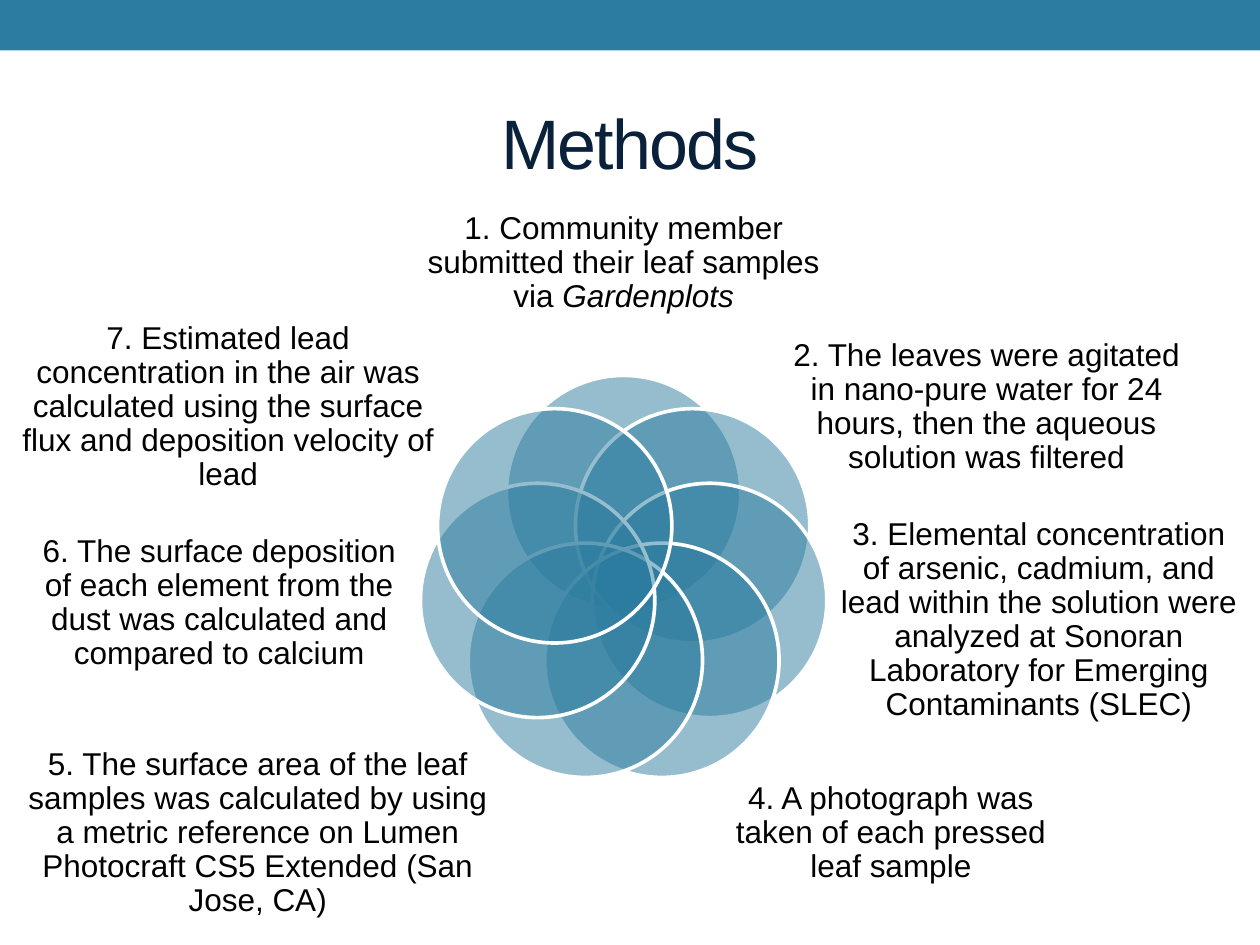
from math import cos, pi, sin

from lxml.etree import SubElement
from pptx import Presentation
from pptx.dml.color import RGBColor
from pptx.enum.shapes import MSO_SHAPE
from pptx.enum.text import MSO_ANCHOR, PP_ALIGN
from pptx.oxml.ns import qn
from pptx.util import Inches, Pt

COLUMNS, ROWS = 100, 75
TEAL, NAVY, WHITE, BLACK = "2C7C9F", "09213B", "FFFFFF", "000000"

# Centre of the ring, its radius and the radius of each petal, in grid cells
RING_COLUMN, RING_ROW, RING_RADIUS, PETAL_RADIUS = 49.5, 46.1, 7, 9.3

# Grid box (column, row, columns, rows) and spans; text between * is italic
STEPS = [
    ((33.7, 15.2, 31.6, 11.4),
     "1. Community member submitted their leaf samples via *Gardenplots*"),
    ((62.8, 26.1, 31, 12.5),
     "2. The leaves were agitated in nano-pure water for 24 hours, "
     "then the aqueous solution was filtered"),
    ((66.6, 42.5, 31.7, 13.4),
     "3. Elemental concentration of arsenic, cadmium, and lead within the "
     "solution were analyzed at Sonoran Laboratory for Emerging "
     "Contaminants (SLEC)"),
    ((58.4, 60, 24.6, 12.3),
     "4. A photograph was taken of each pressed leaf sample"),
    ((1.7, 60, 37.5, 12.3),
     "5. The surface area of the leaf samples was calculated by using a "
     "metric reference on Lumen Photocraft CS5 Extended (San Jose, CA)"),
    ((3.1, 41.2, 28.6, 13.4),
     "6. The surface deposition of each element from the dust was "
     "calculated and compared to calcium"),
    ((1.7, 26.1, 32.8, 12.5),
     "7. Estimated lead concentration in the air was calculated using the "
     "surface flux and deposition velocity of lead"),
]


def color(value):
    return RGBColor.from_string(value)


def write(frame, text, size=18, ink=BLACK, line_spacing=0.9, tracking=0):
    """Fill a frame with one centred paragraph; *stars* mark italics."""
    para = frame.paragraphs[0]
    para.alignment = PP_ALIGN.CENTER
    para.line_spacing = line_spacing
    for index, part in enumerate(text.split("*")):
        if not part:
            continue
        span = para.add_run()
        span.text = part
        span.font.name = "Arial"
        span.font.size = Pt(size)
        span.font.color.rgb = color(ink)
        if index % 2:
            span.font.italic = True
        if tracking:
            span.font._element.set("spc", str(tracking * 100))


class Slide:
    def __init__(self, deck):
        self.cell_width = deck.slide_width / COLUMNS
        self.cell_height = deck.slide_height / ROWS
        self.page = deck.slides.add_slide(deck.slide_layouts[6])

    def place(self, column, row, columns, rows):
        return (round(column * self.cell_width), round(row * self.cell_height),
                round(columns * self.cell_width), round(rows * self.cell_height))

    def shape(self, kind, area, fill, opacity=100, outline=None):
        shape = self.page.shapes.add_shape(kind, *self.place(*area))
        shape.shadow.inherit = False
        shape.fill.solid()
        shape.fill.fore_color.rgb = color(fill)
        if opacity < 100:
            tint = shape._element.spPr.find(qn("a:solidFill"))[0]
            SubElement(tint, qn("a:alpha"), val=str(opacity * 1000))
        if outline:
            shape.line.color.rgb = color(outline)
            shape.line.width = Pt(2.08)
        else:
            shape.line.fill.background()

    def petal(self, index, count):
        """Draw one circle of the ring, clockwise from the top."""
        angle = 2 * pi * index / count
        left = RING_COLUMN + RING_RADIUS * sin(angle) - PETAL_RADIUS
        top = RING_ROW - RING_RADIUS * cos(angle) - PETAL_RADIUS
        area = (left, top, 2 * PETAL_RADIUS, 2 * PETAL_RADIUS)
        self.shape(MSO_SHAPE.OVAL, area, TEAL, opacity=50, outline=WHITE)

    def text(self, area, text, **style):
        box = self.page.shapes.add_textbox(*self.place(*area))
        frame = box.text_frame
        frame.word_wrap = True
        frame.vertical_anchor = MSO_ANCHOR.MIDDLE
        frame.margin_left = frame.margin_right = 0
        frame.margin_top = frame.margin_bottom = 0
        write(frame, text, **style)


def main():
    deck = Presentation()
    deck.slide_width, deck.slide_height = Inches(10), Inches(7.5)
    slide = Slide(deck)
    slide.shape(MSO_SHAPE.RECTANGLE, (0, 0, COLUMNS, 4), TEAL)
    slide.text((5, 5.8, 90, 10.8), "Methods", size=40, ink=NAVY,
               line_spacing=1.0, tracking=-1)
    for index, (area, text) in enumerate(STEPS):
        slide.petal(index, len(STEPS))
        slide.text(area, text)
    deck.save("out.pptx")


if __name__ == "__main__":
    main()
